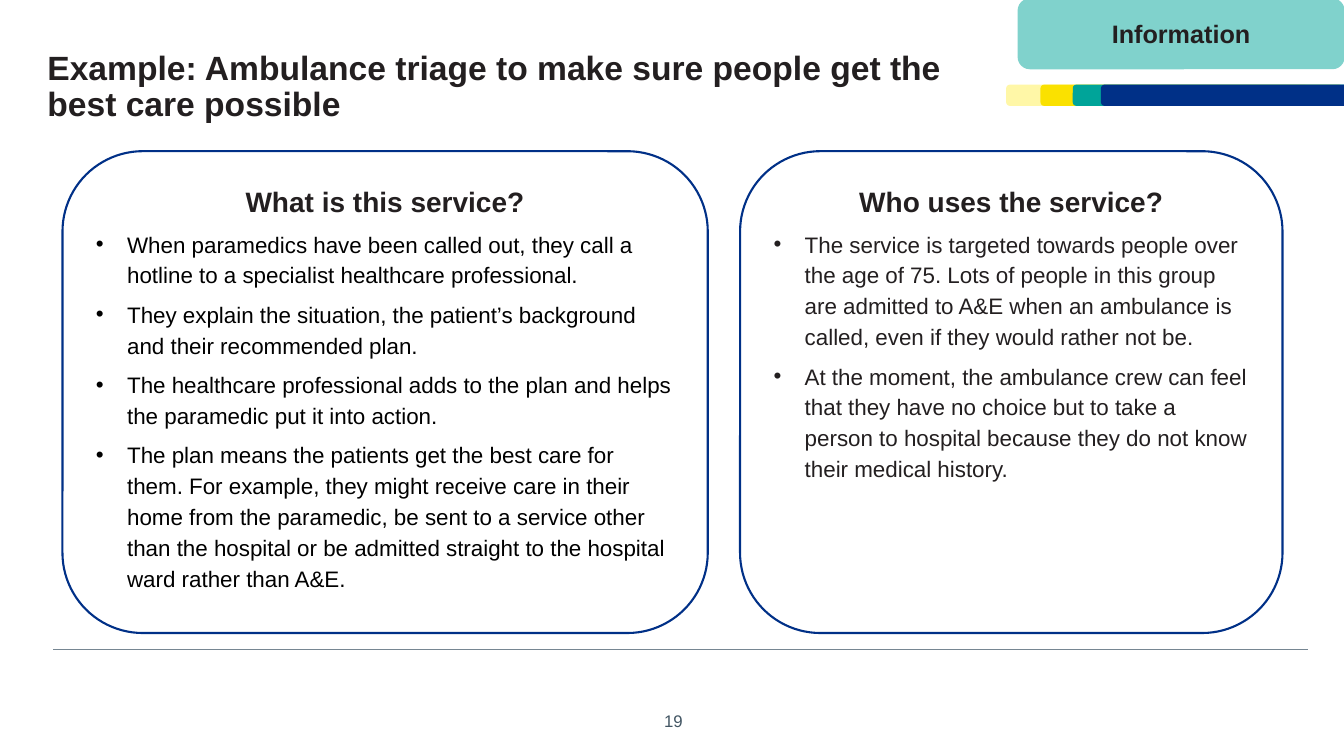
from dataclasses import dataclass

from lxml import etree
from pptx import Presentation
from pptx.dml.color import RGBColor
from pptx.enum import shapes, text
from pptx.oxml import ns
from pptx.util import Inches, Pt


@dataclass(frozen=True)
class Theme:
    font: str = "Arial"
    ink: str = "231F20"
    black: str = "000000"
    navy: str = "003087"
    mint: str = "80D2CC"
    rule: str = "768692"
    number: str = "425563"
    stripes: tuple = ("FFF7A7", "FAE100", "00A499", "003087")
    title_size: int = 24
    heading_size: int = 20
    tag_size: int = 18
    body_size: int = 16
    number_size: int = 12


class SlideBuilder:
    def __init__(self, deck, theme):
        self.theme = theme
        self.page = deck.slides.add_slide(deck.slide_layouts[5])

    def style(self, para, size, color, bold=False, align=text.PP_ALIGN.LEFT):
        para.alignment = align
        for span in para.runs:
            span.font.name = self.theme.font
            span.font.size = Pt(size)
            span.font.bold = bold
            span.font.color.rgb = RGBColor.from_string(color)

    def title(self, words, left, top, width, height):
        box = self.page.shapes.title
        box.left, box.top = Inches(left), Inches(top)
        box.width, box.height = Inches(width), Inches(height)
        frame = box.text_frame
        frame.text = words
        frame.word_wrap = True
        frame.auto_size = text.MSO_AUTO_SIZE.NONE
        frame.vertical_anchor = text.MSO_ANCHOR.TOP
        frame.margin_left = frame.margin_top = 0
        frame.margin_right = frame.margin_bottom = 0
        para = frame.paragraphs[0]
        para.line_spacing = 0.9
        self.style(para, self.theme.title_size, self.theme.ink, bold=True)

    def rounded(self, left, top, width, height, fill=None, line=None, weight=1):
        box = self.page.shapes.add_shape(
            shapes.MSO_SHAPE.ROUNDED_RECTANGLE,
            Inches(left), Inches(top), Inches(width), Inches(height))
        box.shadow.inherit = False
        if fill:
            box.fill.solid()
            box.fill.fore_color.rgb = RGBColor.from_string(fill)
        else:
            box.fill.background()
        if line:
            box.line.color.rgb = RGBColor.from_string(line)
            box.line.width = Pt(weight)
        else:
            box.line.fill.background()
        return box

    def tag(self, words, left, top, width, height):
        box = self.rounded(left, top, width, height, self.theme.mint, self.theme.mint)
        box.text_frame.text = words
        box.text_frame.vertical_anchor = text.MSO_ANCHOR.MIDDLE
        self.style(box.text_frame.paragraphs[0], self.theme.tag_size,
                   self.theme.ink, bold=True, align=text.PP_ALIGN.CENTER)

    def bullet(self, para, indent):
        properties = para._p.get_or_add_pPr()
        properties.set("marL", str(Inches(indent)))
        properties.set("indent", str(-Inches(indent)))
        etree.SubElement(properties, ns.qn("a:buFont"), typeface=self.theme.font)
        etree.SubElement(properties, ns.qn("a:buChar"), char="•")

    def panel(self, heading, points, left, width, color, top=1.5, height=4.78):
        """Outlined box with a centred heading above bulleted points."""
        box = self.rounded(left, top, width, height, line=self.theme.navy, weight=1.5)
        frame = box.text_frame
        frame.word_wrap = True
        frame.vertical_anchor = text.MSO_ANCHOR.TOP
        frame.text = "\n".join([heading, *points])
        first, *rest = frame.paragraphs
        first.line_spacing = 1.15
        self.style(first, self.theme.heading_size, self.theme.ink,
                   bold=True, align=text.PP_ALIGN.CENTER)
        for para in rest:
            self.bullet(para, 0.31)
            para.line_spacing = 1.15
            para.space_before = Pt(6)
            self.style(para, self.theme.body_size, color)

    def rule(self, left, right, y):
        line = self.page.shapes.add_connector(
            shapes.MSO_CONNECTOR.STRAIGHT,
            Inches(left), Inches(y), Inches(right), Inches(y))
        line.line.color.rgb = RGBColor.from_string(self.theme.rule)
        line.line.width = Pt(0.5)
        etree.SubElement(line._element.spPr, ns.qn("a:effectLst"))

    def page_number(self, number, left, top, width, height):
        box = self.page.shapes.add_textbox(
            Inches(left), Inches(top), Inches(width), Inches(height))
        box.text_frame.text = number
        box.text_frame.word_wrap = False
        box.text_frame.auto_size = text.MSO_AUTO_SIZE.SHAPE_TO_FIT_TEXT
        self.style(box.text_frame.paragraphs[0], self.theme.number_size,
                   self.theme.number, align=text.PP_ALIGN.RIGHT)


def main():
    deck = Presentation()
    deck.slide_width, deck.slide_height = Inches(13.33), Inches(7.5)
    theme = Theme()
    slide = SlideBuilder(deck, theme)

    slide.page_number("19", 6.46, 7, 0.41, 0.3)
    slide.rule(0.53, 12.97, 6.44)
    for left, color in zip((9.98, 10.32, 10.64, 10.92), theme.stripes):
        slide.rounded(left, 0.84, 3, 0.21, fill=color)
    slide.tag("Information", 10.1, -0.01, 3.23, 0.69)
    slide.title("Example: Ambulance triage to make sure people get the best care possible",
                0.47, 0.51, 9.51, 1.04)
    slide.panel("What is this service?", [
        "When paramedics have been called out, they call a hotline to a specialist "
        "healthcare professional.",
        "They explain the situation, the patient’s background and their recommended plan.",
        "The healthcare professional adds to the plan and helps the paramedic put it "
        "into action.",
        "The plan means the patients get the best care for them. For example, they might "
        "receive care in their home from the paramedic, be sent to a service other than "
        "the hospital or be admitted straight to the hospital ward rather than A&E.",
    ], 0.62, 6.4, theme.black)
    slide.panel("Who uses the service?", [
        "The service is targeted towards people over the age of 75. Lots of people in this "
        "group are admitted to A&E when an ambulance is called, even if they would rather "
        "not be.",
        "At the moment, the ambulance crew can feel that they have no choice but to take a "
        "person to hospital because they do not know their medical history.",
    ], 7.34, 5.38, theme.ink)

    deck.save("out.pptx")


if __name__ == "__main__":
    main()
